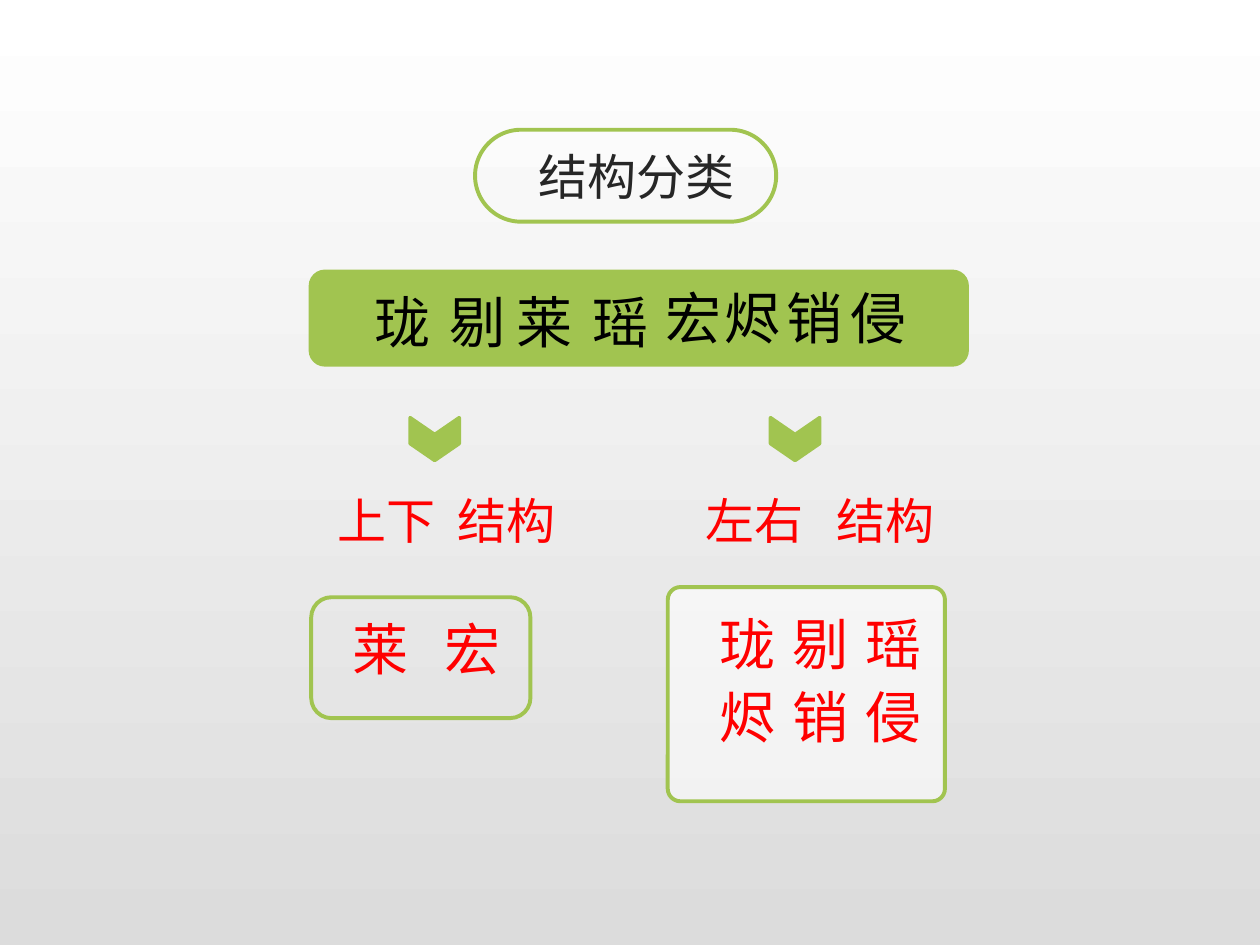
"""Build a slide that sorts Chinese characters by their structure."""
from lxml import etree
from pptx import Presentation
from pptx.dml.color import RGBColor
from pptx.enum.shapes import MSO_SHAPE
from pptx.enum.text import MSO_ANCHOR, PP_ALIGN
from pptx.oxml.ns import qn
from pptx.util import Inches, Pt

ROUND, CHEVRON = MSO_SHAPE.ROUNDED_RECTANGLE, MSO_SHAPE.CHEVRON
MIDDLE, CENTER, LEFT = MSO_ANCHOR.MIDDLE, PP_ALIGN.CENTER, PP_ALIGN.LEFT
FONT = "Noto Sans CJK SC"
GREEN, RED, BLACK, DARK, WHITE = "A1C450", "FF0000", "000000", "262626", "FFFFFF"
BACKGROUND = [(0, WHITE), (1, "DCDCDC")]

TITLE = "结构分类"
TITLE_BOX = (3.77, 1.03, 2.39, 0.73)
BANNER_BOX = (2.45, 2.14, 5.24, 0.77)
BANNER = [
    ("珑剔莱瑶", (2.87, 3.47, 4.0, 4.6), 2.23),
    ("宏烬销侵", (5.18, 5.65, 6.14, 6.65), 2.2),
]
GROUPS = [
    dict(words=("上下", "结构"), label=(2.58, 3.84, 2.17, 0.57), tab=0.95,
         arrow=3.28, box=(2.47, 4.74, 1.74, 0.96), radius=0.167, fill=None,
         rows=["莱宏"], start=(2.7, 4.83), pitch=0.73),
    dict(words=("左右", "结构"), label=(5.5, 3.84, 2.36, 0.57), tab=1.04,
         arrow=6.14, box=(5.3, 4.66, 2.2, 1.7), radius=0.059, fill=WHITE,
         rows=["珑剔瑶", "烬销侵"], start=(5.61, 4.79), pitch=0.58),
]
ARROW_TOP, ARROW_W, ARROW_H = 3.29, 0.34, 0.39
CHAR_W, CHAR_H = 0.65, 0.64


def rgb(value):
    return RGBColor.from_string(value)


def add_shape(s, kind, box, radius, fill=None, line=None, alpha=None):
    sp = s.shapes.add_shape(kind, *map(Inches, box))
    sp.shadow.inherit = False
    sp.adjustments[0] = radius
    if fill:
        sp.fill.solid()
        sp.fill.fore_color.rgb = rgb(fill)
        if alpha:
            color = sp.fill._xPr.find(".//" + qn("a:srgbClr"))
            etree.SubElement(color, qn("a:alpha"), val=str(alpha * 1000))
    else:
        sp.fill.background()
    if line:
        sp.line.color.rgb = rgb(GREEN)
        sp.line.width = Pt(line)
    else:
        sp.line.fill.background()
    return sp


def write(tf, text, size, color, align=LEFT, tab=None):
    p = tf.paragraphs[0]
    p.text = text
    p.alignment = align
    if tab:
        tabs = etree.SubElement(p._p.get_or_add_pPr(), qn("a:tabLst"))
        etree.SubElement(tabs, qn("a:tab"), pos=str(Inches(tab)), algn="l")
    p.font.size = Pt(size)
    p.font.color.rgb = rgb(color)
    p.font.name = FONT
    etree.SubElement(p.font._rPr, qn("a:ea"), typeface=FONT)


def add_text(s, box, text, size, color, tab=None):
    tf = s.shapes.add_textbox(*map(Inches, box)).text_frame
    tf.word_wrap = tab is not None
    write(tf, text, size, color, tab=tab)


def add_chars(s, chars, lefts, top, color):
    for char, left in zip(chars, lefts):
        add_text(s, (left, top, CHAR_W, CHAR_H), char, 32, color)


def add_group(s, group):
    add_shape(s, ROUND, group["box"], group["radius"], group["fill"], 2.25, 60)
    arrow = (group["arrow"], ARROW_TOP, ARROW_W, ARROW_H)
    add_shape(s, CHEVRON, arrow, 0.394, GREEN, 2).rotation = 90
    add_text(s, group["label"], "\t".join(group["words"]), 28, RED, group["tab"])
    left, top = group["start"]
    for row, chars in enumerate(group["rows"]):
        lefts = [left + col * group["pitch"] for col in range(len(chars))]
        add_chars(s, chars, lefts, top + row * group["pitch"], RED)


def add_title(s):
    add_shape(s, ROUND, TITLE_BOX, 0.5, line=2.25)
    title = s.shapes.title
    title.left, title.top, title.width, title.height = map(Inches, TITLE_BOX)
    tf = title.text_frame
    tf.margin_left = Inches(0.27)
    tf.vertical_anchor = MIDDLE
    write(tf, TITLE, 28, DARK, CENTER)


def main():
    prs = Presentation()
    prs.slide_width, prs.slide_height = Inches(10), Inches(7.5)
    s = prs.slides.add_slide(prs.slide_layouts[5])
    fill = s.background.fill
    fill.gradient()
    fill.gradient_angle = 270
    for stop, (position, color) in zip(fill.gradient_stops, BACKGROUND):
        stop.position = position
        stop.color.rgb = rgb(color)
    add_title(s)
    add_shape(s, ROUND, BANNER_BOX, 0.167, GREEN)
    for chars, lefts, top in BANNER:
        add_chars(s, chars, lefts, top, BLACK)
    for group in GROUPS:
        add_group(s, group)
    prs.save("out.pptx")


if __name__ == "__main__":
    main()
